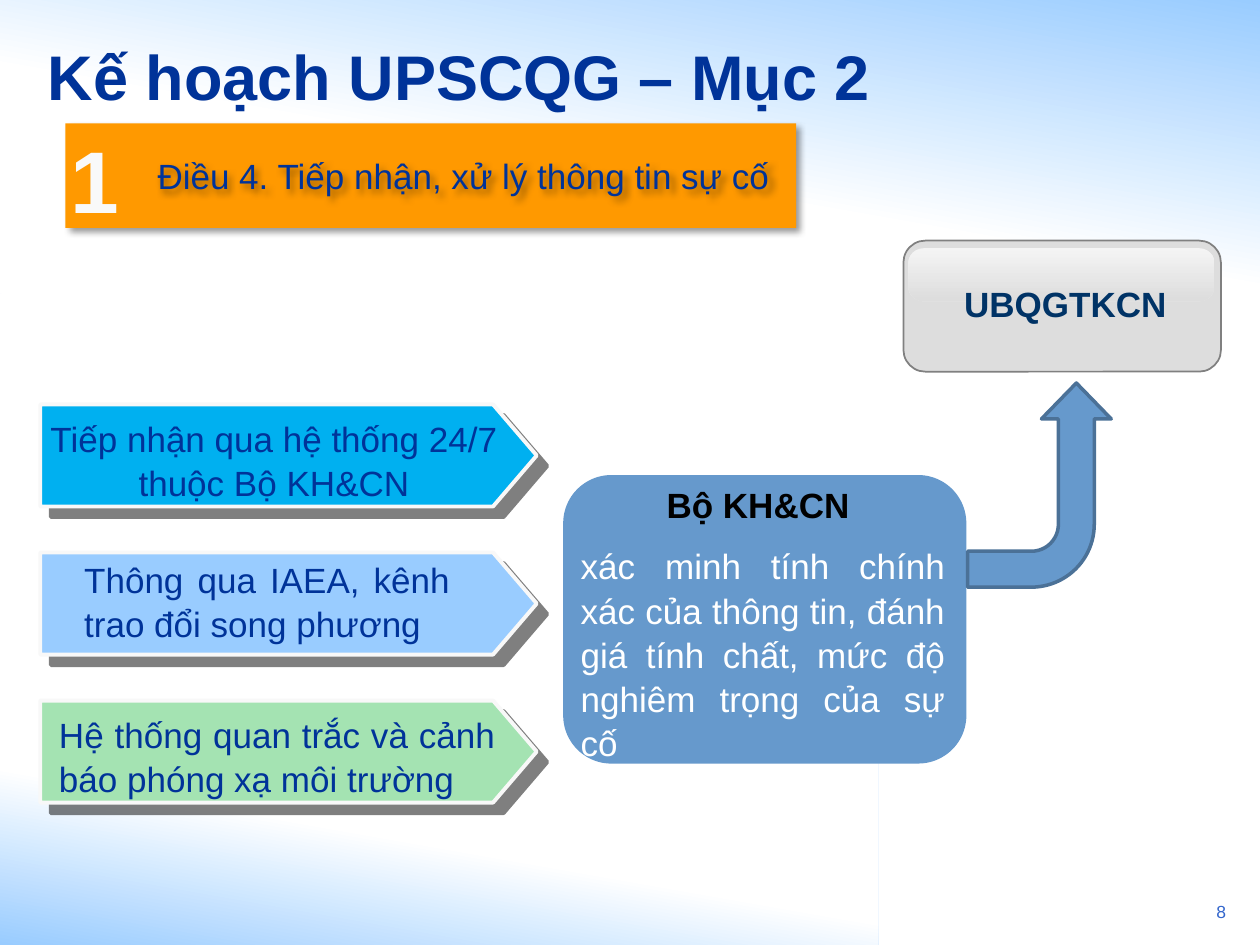
from lxml.etree import SubElement
from pptx import Presentation
from pptx.dml.color import RGBColor
from pptx.enum.shapes import MSO_SHAPE as Shape
from pptx.enum.text import MSO_ANCHOR, PP_ALIGN as Align
from pptx.oxml.ns import qn
from pptx.util import Inches, Pt

TITLE = "Kế hoạch UPSCQG – Mục 2"
NUMBER, ARTICLE = "1", "Điều 4. Tiếp nhận, xử lý thông tin sự cố"
COMMITTEE = "UBQGTKCN"
PAGE = "8"
MINISTRY = "Bộ KH&CN "
DUTY = ("xác minh tính chính xác của thông tin, đánh giá tính chất, "
        "mức độ nghiêm trọng của sự cố")
# wording, fill, text frame, alignment, left indent
CHANNELS = [
    ("Tiếp nhận qua hệ thống 24/7 thuộc Bộ KH&CN", "00B0F0",
     (0.23, 3.25, 3.89, 0.77), Align.CENTER, 0),
    ("Thông qua IAEA, kênh trao đổi song phương", "99CCFF",
     (0.07, 4.37, 3.6, 0.77), Align.JUSTIFY, 0.5),
    ("Hệ thống quan trắc và cảnh báo phóng xạ môi trường", "A4E3B2",
     (-0.13, 5.6, 4.16, 0.77), Align.JUSTIFY, 0.5),
]
CHANNEL_TOP, CHANNEL_STEP = 3.21, 1.175
NAVY, STEEL, SKY = "003399", "6699CC", "99CCFF"


def rgb(color):
    return RGBColor.from_string(color)


def add_box(shapes, kind, frame, fill=None, line=None, adjust=()):
    box = shapes.add_shape(kind, *map(Inches, frame))
    box.shadow.inherit = False
    for index, value in enumerate(adjust):
        box.adjustments[index] = value
    if fill:
        box.fill.solid()
        box.fill.fore_color.rgb = rgb(fill)
    if line:
        color, width = line
        box.line.color.rgb = rgb(color)
        box.line.width = Pt(width)
    else:
        box.line.fill.background()
    return box


def set_gradient(box, stops, angle, opacity=100):
    """Two-stop linear gradient; angle in degrees, counter-clockwise."""
    box.fill.gradient()
    box.fill.gradient_angle = angle
    for stop, (position, color) in zip(box.fill.gradient_stops, stops):
        stop.position = position
        stop.color.rgb = rgb(color)
    if opacity < 100:
        for color in box._element.spPr.iter(qn("a:srgbClr")):
            SubElement(color, qn("a:alpha"), val=str(opacity * 1000))


def add_shadow(box, opacity, blur, distance):
    box.shadow.inherit = False
    effects = box._element.spPr.find(qn("a:effectLst"))
    shadow = SubElement(effects, qn("a:outerShdw"), blurRad=str(Pt(blur)),
                        dist=str(Pt(distance)), dir=str(45 * 60000),
                        algn="ctr", rotWithShape="0")
    color = SubElement(shadow, qn("a:srgbClr"), val="000000")
    SubElement(color, qn("a:alpha"), val=str(opacity * 1000))


def write(paragraph, text, color, size=20, bold=False, **layout):
    paragraph.text = text
    for name, value in layout.items():
        setattr(paragraph, name, value)
    for name, value in dict(name="Arial", size=Pt(size), bold=bold).items():
        setattr(paragraph.font, name, value)
    paragraph.font.color.rgb = rgb(color)


def add_text(shapes, frame, text, color, **style):
    label = shapes.add_textbox(*map(Inches, frame))
    label.text_frame.word_wrap = True
    style = {"line_spacing": 1.05, **style}
    write(label.text_frame.paragraphs[0], text, color, **style)
    return label


def add_background(shapes):
    # each gradient starts at its slide edge
    for frame, angle, white_at in (((0, 5.8, 6.97, 1.7), 80, 0.48),
                                   ((0, 0, 10, 2.33), 260, 0.56)):
        band = add_box(shapes, Shape.RECTANGLE, frame)
        set_gradient(band, [(0, SKY), (white_at, "FFFFFF")], angle)


def add_title(slide):
    title = slide.shapes.title
    slide.shapes._spTree.append(title._element)  # in front of the background
    title.left, title.top, title.width, title.height = map(
        Inches, (0.28, 0.13, 7.4, 0.94))
    title.text_frame.vertical_anchor = MSO_ANCHOR.MIDDLE
    write(title.text_frame.paragraphs[0], TITLE, NAVY, 36, True,
          alignment=Align.LEFT)


def add_banner(shapes):
    group = shapes.add_group_shape().shapes
    bar = add_box(group, Shape.RECTANGLE, (0.52, 0.98, 5.8, 0.83), "FF9900")
    add_shadow(bar, 40, 4, 3)
    article = add_text(group, (1.05, 1.11, 5.52, 0.54), ARTICLE, NAVY)
    frame = article.text_frame
    frame.margin_left = frame.margin_right = Inches(0.2)
    frame.margin_top = frame.margin_bottom = Inches(0.1)
    add_shadow(article, 40, 4, 3)
    add_text(shapes, (0.25, 0.91, 1, 0.94), NUMBER, "F9F9F9",
             size=50, bold=True, alignment=Align.CENTER)


def add_ministry(shapes):
    add_box(shapes, Shape.ROUNDED_RECTANGLE, (4.47, 3.77, 3.2, 2.29), STEEL,
            adjust=[0.167])
    label = add_text(shapes, (4.51, 3.77, 3.09, 2.79), MINISTRY, "000000",
                     bold=True, alignment=Align.CENTER)
    write(label.text_frame.add_paragraph(), DUTY, "FFFFFF",
          alignment=Align.JUSTIFY, space_before=Pt(10), line_spacing=1.05)


def add_channels(shapes):
    for row, (text, fill, frame, alignment, indent) in enumerate(CHANNELS):
        top = CHANNEL_TOP + row * CHANNEL_STEP
        arrow = add_box(shapes, Shape.PENTAGON, (0.32, top, 3.94, 0.81), fill,
                        ("F8F8F8", 2.25), [0.428])
        add_shadow(arrow, 50, 0, 8.5)
        label = add_text(shapes, frame, text, NAVY, alignment=alignment)
        properties = label.text_frame.paragraphs[0]._p.get_or_add_pPr()
        properties.set("marL", str(Inches(indent)))


def add_committee(shapes):
    arrow = add_box(shapes, Shape.BENT_ARROW, (7.44, 3.28, 1.62, 1.14), STEEL,
                    ("4B7197", 2), [0.25, 0.243, 0.25, 0.438])
    arrow.rotation = 90
    arrow._element.spPr.xfrm.set("flipH", "1")
    group = shapes.add_group_shape().shapes
    add_box(group, Shape.ROUNDED_RECTANGLE, (7.17, 1.91, 2.52, 1.04),
            "DDDDDD", ("808080", 1), [0.167])
    gloss = add_box(group, Shape.ROUNDED_RECTANGLE, (7.21, 1.97, 2.43, 0.42),
                    adjust=[0.284])
    set_gradient(gloss, [(0, "FFFFFF"), (1, "DDDDDD")], 270, opacity=70)
    add_text(shapes, (7.43, 2.18, 2.05, 0.44), COMMITTEE, "003366",
             bold=True, alignment=Align.CENTER)


def main():
    deck = Presentation()
    deck.slide_width, deck.slide_height = Inches(10), Inches(7.5)
    slide = deck.slides.add_slide(deck.slide_layouts[5])
    shapes = slide.shapes
    add_background(shapes)
    add_text(shapes, (9.27, 7.09, 0.56, 0.32), PAGE, "3366CC", size=10,
             alignment=Align.RIGHT)
    add_title(slide)
    add_banner(shapes)
    add_ministry(shapes)
    add_channels(shapes)
    add_committee(shapes)
    deck.save("out.pptx")


if __name__ == "__main__":
    main()
